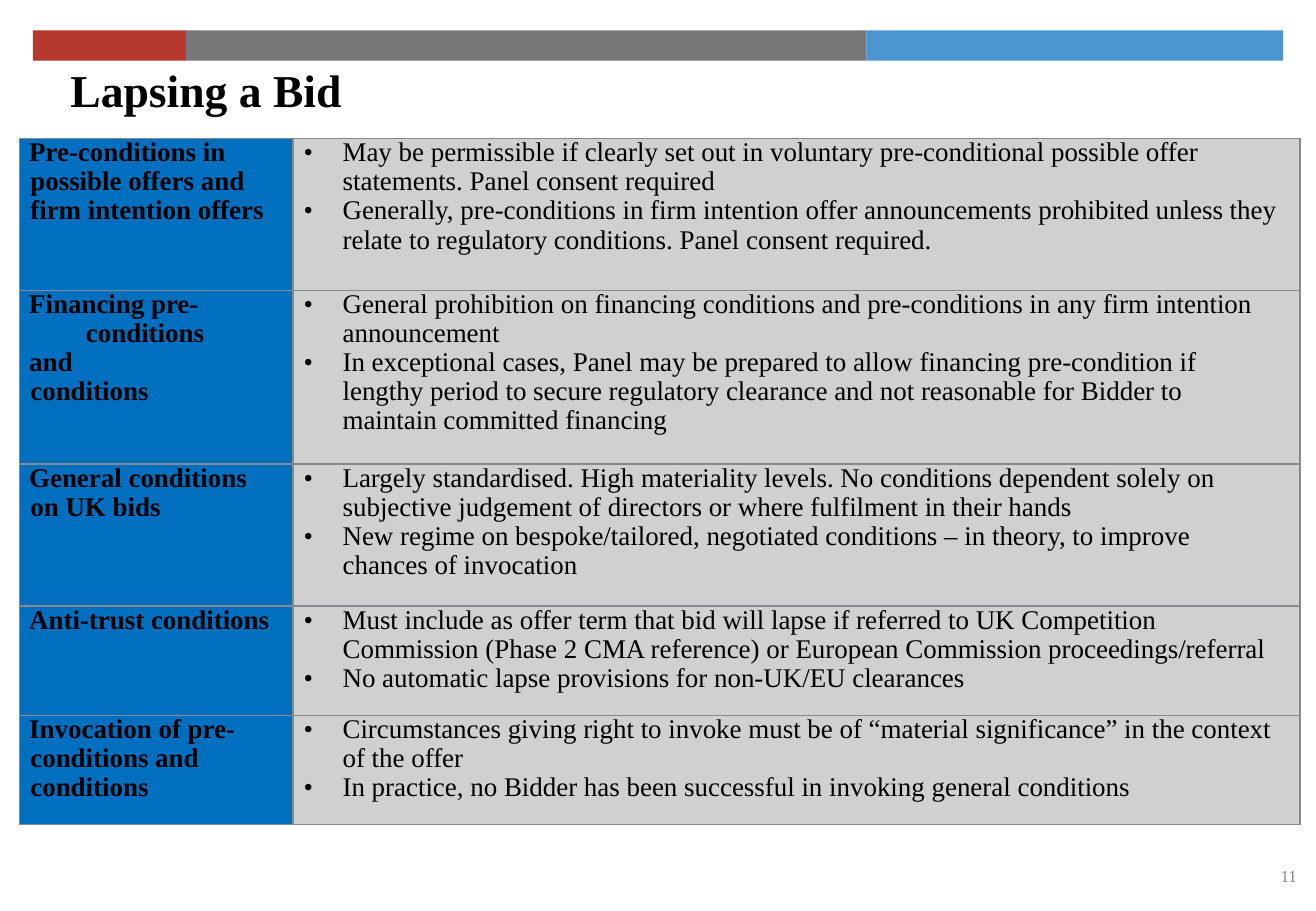
from lxml.etree import SubElement
from pptx import Presentation
from pptx.dml.color import RGBColor
from pptx.enum.shapes import MSO_SHAPE
from pptx.enum.text import MSO_ANCHOR, PP_ALIGN
from pptx.oxml.ns import qn
from pptx.util import Inches, Pt

BLACK = RGBColor(0x00, 0x00, 0x00)
RED = RGBColor(0xB6, 0x39, 0x2D)
GREY = RGBColor(0x77, 0x77, 0x79)
SKY = RGBColor(0x4B, 0x95, 0xD1)
BLUE = RGBColor(0x00, 0x6F, 0xC0)
PALE = RGBColor(0xD0, 0xD0, 0xD1)
MUTED = RGBColor(0x89, 0x89, 0x8D)
FONT = "Times New Roman"

BANDS = [(1.26, RED), (5.6, GREY), (3.43, SKY)]
COLUMN_WIDTHS = [2.25, 8.29]
FINANCING_ROW = 1

# Row height, heading paragraphs, bullet paragraphs; "\n" breaks a line.
CONDITIONS = [
    (1.25, ["Pre-conditions in\npossible offers and\nfirm intention offers"], [
        "May be permissible if clearly set out in voluntary pre-conditional possible offer\n"
        "statements. Panel consent required",
        "Generally, pre-conditions in firm intention offer announcements prohibited unless they\n"
        "relate to regulatory conditions. Panel consent required."]),
    (1.43, ["Financing pre-", "conditions", "and\nconditions"], [
        "General prohibition on financing conditions and pre-conditions in any firm intention\n"
        "announcement",
        "In exceptional cases, Panel may be prepared to allow financing pre-condition if\n"
        "lengthy period to secure regulatory clearance and not reasonable for Bidder to\n"
        "maintain committed financing"]),
    (1.17, ["General conditions\non UK bids"], [
        "Largely standardised. High materiality levels. No conditions dependent solely on\n"
        "subjective judgement of directors or where fulfilment in their hands",
        "New regime on bespoke/tailored, negotiated conditions – in theory, to improve\n"
        "chances of invocation"]),
    (0.9, ["Anti-trust conditions"], [
        "Must include as offer term that bid will lapse if referred to UK Competition\n"
        "Commission (Phase 2 CMA reference) or European Commission proceedings/referral",
        "No automatic lapse provisions for non-UK/EU clearances"]),
    (0.9, ["Invocation of pre-\nconditions and\nconditions"], [
        "Circumstances giving right to invoke must be of “material significance” in the context\n"
        "of the offer",
        "In practice, no Bidder has been successful in invoking general conditions"]),
]


def add_lines(paragraph, text, size, color=BLACK, bold=False):
    for index, line in enumerate(text.split("\n")):
        if index:
            paragraph.add_line_break()
        run = paragraph.add_run()
        run.text = line
        run.font.name = FONT
        run.font.size = Pt(size)
        run.font.bold = bold
        run.font.color.rgb = color


def clear_margins(holder):
    holder.margin_left = holder.margin_right = 0
    holder.margin_top = holder.margin_bottom = 0


def set_indent(paragraph, left, first):
    properties = paragraph._p.get_or_add_pPr()
    properties.set("marL", str(Inches(left)))
    properties.set("indent", str(Inches(first)))
    return properties


def add_bullet(paragraph):
    properties = set_indent(paragraph, 0.41, -0.32)
    color = SubElement(properties, qn("a:buClr"))
    SubElement(color, qn("a:srgbClr"), val=str(BLACK))
    SubElement(properties, qn("a:buFont"), typeface=FONT)
    SubElement(properties, qn("a:buChar"), char="•")


def add_borders(cell):
    """Draw all four cell edges, which must come before the fill."""
    properties = cell._tc.get_or_add_tcPr()
    for index, side in enumerate(("a:lnL", "a:lnR", "a:lnT", "a:lnB")):
        edge = SubElement(properties, qn(side), w=str(Pt(1)))
        properties.insert(index, edge)
        fill = SubElement(edge, qn("a:solidFill"))
        SubElement(fill, qn("a:srgbClr"), val=str(MUTED))


def fill_cell(cell, texts, color, is_heading):
    clear_margins(cell)
    cell.vertical_anchor = MSO_ANCHOR.TOP
    cell.fill.solid()
    cell.fill.fore_color.rgb = color
    add_borders(cell)
    frame = cell.text_frame
    for index, text in enumerate(texts):
        paragraph = frame.add_paragraph() if index else frame.paragraphs[0]
        paragraph.line_spacing = 0.97
        if is_heading:
            set_indent(paragraph, 0.09, -0.01)
        else:
            add_bullet(paragraph)
        add_lines(paragraph, text, 16, bold=is_heading)


def add_bands(slide, left, top, height):
    for width, color in BANDS:
        band = slide.shapes.add_shape(MSO_SHAPE.RECTANGLE, Inches(left), Inches(top),
                                      Inches(width), Inches(height))
        band.shadow.inherit = False
        band.fill.solid()
        band.fill.fore_color.rgb = color
        band.line.fill.background()
        left += width


def set_title(slide, text, left, top, width, height):
    title = slide.shapes.title
    title.left, title.top = Inches(left), Inches(top)
    title.width, title.height = Inches(width), Inches(height)
    frame = title.text_frame
    clear_margins(frame)
    frame.word_wrap = False
    frame.vertical_anchor = MSO_ANCHOR.TOP
    paragraph = frame.paragraphs[0]
    paragraph.alignment = PP_ALIGN.LEFT
    add_lines(paragraph, text, 27, bold=True)


def add_conditions_table(slide, left, top):
    heights = [height for height, _, _ in CONDITIONS]
    table = slide.shapes.add_table(
        len(CONDITIONS), len(COLUMN_WIDTHS), Inches(left), Inches(top),
        Inches(sum(COLUMN_WIDTHS)), Inches(sum(heights))).table
    table.first_row = table.horz_banding = False
    for column, width in zip(table.columns, COLUMN_WIDTHS):
        column.width = Inches(width)
    for index, (height, heading, bullets) in enumerate(CONDITIONS):
        table.rows[index].height = Inches(height)
        fill_cell(table.cell(index, 0), heading, BLUE, True)
        fill_cell(table.cell(index, 1), bullets, PALE, False)
    financing = table.cell(FINANCING_ROW, 0)
    financing.margin_right = Inches(0.73)
    financing.text_frame.paragraphs[1].alignment = PP_ALIGN.RIGHT


def add_page_number(slide, number, left, top, width, height):
    frame = slide.shapes.add_textbox(Inches(left), Inches(top),
                                     Inches(width), Inches(height)).text_frame
    clear_margins(frame)
    frame.margin_top = Inches(0.01)
    frame.word_wrap = True
    set_indent(frame.paragraphs[0], 0.03, 0)
    add_lines(frame.paragraphs[0], number, 10, MUTED)


def main():
    deck = Presentation()
    deck.slide_width, deck.slide_height = Inches(10.83), Inches(7.5)
    slide = deck.slides.add_slide(deck.slide_layouts[5])
    add_bands(slide, 0.27, 0.25, 0.25)
    set_title(slide, "Lapsing a Bid", 0.58, 0.51, 2.26, 0.46)
    add_conditions_table(slide, 0.16, 1.14)
    add_page_number(slide, "11", 10.51, 7.12, 0.24, 0.19)
    deck.save("out.pptx")


if __name__ == "__main__":
    main()
